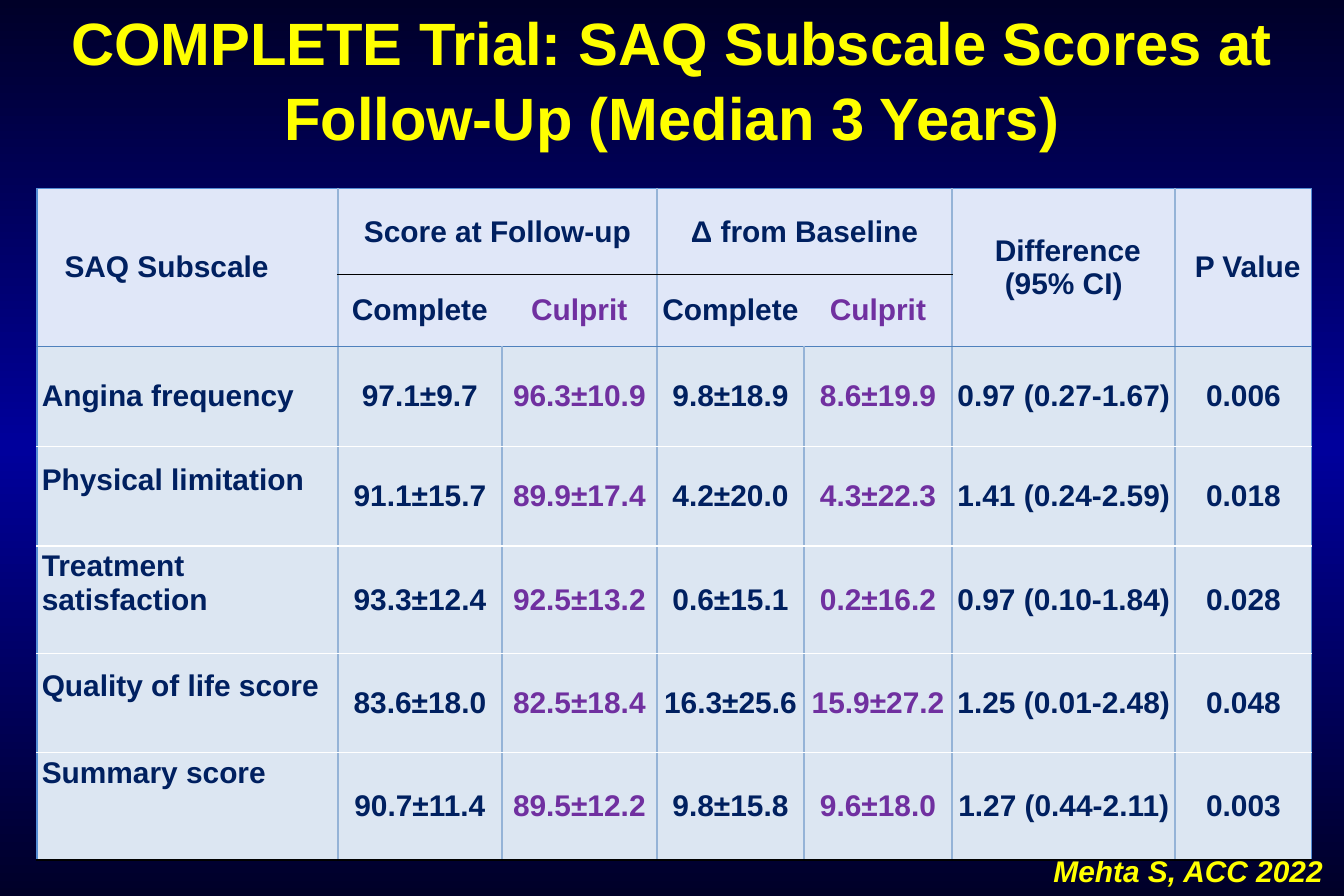
from copy import deepcopy

from lxml import etree
from pptx import Presentation
from pptx.dml import color
from pptx.enum import text
from pptx.oxml import ns
from pptx.util import Inches, Pt

TITLE = "COMPLETE Trial: SAQ Subscale Scores at Follow-Up (Median 3 Years)"
CITATION = "Mehta S, ACC 2022"
ROWS = [
    ("SAQ Subscale", "Score at Follow-up", "", "Δ from Baseline", "",
     "\u00a0Difference\v(95% CI)", "\u00a0P Value"),
    ("", "Complete", "Culprit", "Complete", "Culprit", "", ""),
    ("Angina frequency", "97.1±9.7", "96.3±10.9", "9.8±18.9", "8.6±19.9",
     "0.97 (0.27-1.67)", "0.006"),
    ("Physical limitation", "91.1±15.7", "89.9±17.4", "4.2±20.0", "4.3±22.3",
     "1.41 (0.24-2.59)", "0.018"),
    ("Treatment satisfaction", "93.3±12.4", "92.5±13.2", "0.6±15.1", "0.2±16.2",
     "0.97 (0.10-1.84)", "0.028"),
    ("Quality of life score", "83.6±18.0", "82.5±18.4", "16.3±25.6", "15.9±27.2",
     "1.25 (0.01-2.48)", "0.048"),
    ("Summary score", "90.7±11.4", "89.5±12.2", "9.8±15.8", "9.6±18.0",
     "1.27 (0.44-2.11)", "0.003"),
]
WIDTHS = [2.52, 1.37, 1.3, 1.23, 1.24, 1.87, 1.14]
HEIGHTS = [0.72, 0.6, 0.84, 0.83, 0.9, 0.83, 0.9]
LABEL_LIFT = {3: 0.28, 4: 0.28, 5: 0.28, 6: 0.56}
MERGES = [((0, 0), (1, 0)), ((0, 1), (0, 2)), ((0, 3), (0, 4)),
          ((0, 5), (1, 5)), ((0, 6), (1, 6))]
HEADER_ROWS = 2
CULPRIT_COLUMNS = (2, 4)
BACKGROUND = [(0, "000028"), (0.5, "00009C"), (1, "000028")]
YELLOW, NAVY, PURPLE = "FFFF00", "002060", "7030A0"
HEADER_FILL, BODY_FILL = "E0E7F8", "DCE6F2"
ROW_LINES = ["558ED5", "000000", "4F81BD"] + ["FFFFFF"] * 4 + ["000000"]


def rgb(value):
    return color.RGBColor.from_string(value)


def write(frame, words, size=18, tint=NAVY, italic=False, spacing=None,
          align=text.PP_ALIGN.CENTER):
    frame.text = words
    para = frame.paragraphs[0]
    para.alignment = align
    para.line_spacing = spacing
    for span in para.runs:
        span.font.name = "Arial"
        span.font.size = Pt(size)
        span.font.bold = True
        span.font.italic = italic
        span.font.color.rgb = rgb(tint)


def row_line(edge, column):
    if edge == 1 and column not in range(1, 5):
        return None
    return ROW_LINES[edge], 1


def column_line(edge, row):
    if edge in (0, len(WIDTHS)):
        return "558ED5", 1
    if row < HEADER_ROWS and edge in CULPRIT_COLUMNS:
        return None
    return "95B3D7", 1.5


def add_border(cell, side, line):
    border = etree.SubElement(cell._tc.get_or_add_tcPr(), ns.qn("a:ln" + side))
    if line is None:
        etree.SubElement(border, ns.qn("a:noFill"))
        return
    tint, width = line
    border.set("w", str(Pt(width)))
    fill = etree.SubElement(border, ns.qn("a:solidFill"))
    etree.SubElement(fill, ns.qn("a:srgbClr"), val=tint)


def format_cell(cell, row, column):
    bottom = row + (cell.span_height if cell.is_merge_origin else 1)
    right = column + (cell.span_width if cell.is_merge_origin else 1)
    add_border(cell, "L", column_line(column, row))
    add_border(cell, "R", column_line(right, row))
    add_border(cell, "T", row_line(row, column))
    add_border(cell, "B", row_line(bottom, column))
    cell.fill.solid()
    cell.fill.fore_color.rgb = rgb(HEADER_FILL if row < HEADER_ROWS else BODY_FILL)
    cell.vertical_anchor = text.MSO_ANCHOR.MIDDLE
    cell.margin_left = Inches(0.04)
    cell.margin_right = Inches(0.39 if row == column == 0 else 0.04)
    cell.margin_top = 0
    cell.margin_bottom = Inches(LABEL_LIFT.get(row, 0) if column == 0 else 0)
    if not cell.is_spanned:
        culprit = column in CULPRIT_COLUMNS
        label = column == 0 and row >= HEADER_ROWS
        write(cell.text_frame, ROWS[row][column], tint=PURPLE if culprit else NAVY,
              align=text.PP_ALIGN.LEFT if label else text.PP_ALIGN.CENTER)


def paint_background(page):
    fill = page.background.fill
    fill.gradient()
    fill.gradient_angle = 90
    stop_list = page._element.find(".//" + ns.qn("a:gsLst"))
    stop_list.append(deepcopy(stop_list[-1]))
    for stop, (position, tint) in zip(fill.gradient_stops, BACKGROUND):
        stop.position = position
        stop.color.rgb = rgb(tint)


def add_title(page):
    title = page.shapes.title
    title.left, title.top = 0, Inches(0.02)
    title.width, title.height = Inches(11.25), Inches(1.45)
    frame = title.text_frame
    frame.margin_left = frame.margin_right = frame.margin_top = frame.margin_bottom = 0
    frame.vertical_anchor = text.MSO_ANCHOR.TOP
    frame.auto_size = text.MSO_AUTO_SIZE.NONE
    frame.word_wrap = True
    write(frame, TITLE, size=36, tint=YELLOW, spacing=1.05)


def add_scores(page):
    table = page.shapes.add_table(
        len(ROWS), len(WIDTHS), Inches(0.31), Inches(1.58),
        Inches(sum(WIDTHS)), Inches(sum(HEIGHTS))).table
    table.first_row = table.horz_banding = False
    for column, width in zip(table.columns, WIDTHS):
        column.width = Inches(width)
    for row, height in zip(table.rows, HEIGHTS):
        row.height = Inches(height)
    for first, last in MERGES:
        table.cell(*first).merge(table.cell(*last))
    for row in range(len(ROWS)):
        for column in range(len(WIDTHS)):
            format_cell(table.cell(row, column), row, column)


def main():
    deck = Presentation()
    deck.slide_width, deck.slide_height = Inches(11.25), Inches(7.5)
    page = deck.slides.add_slide(deck.slide_layouts[5])
    paint_background(page)
    add_title(page)
    box = page.shapes.add_textbox(Inches(8.72), Inches(7.09), Inches(2.46), Inches(0.4))
    write(box.text_frame, CITATION, tint=YELLOW, italic=True, align=text.PP_ALIGN.LEFT)
    add_scores(page)
    deck.save("out.pptx")


if __name__ == "__main__":
    main()
